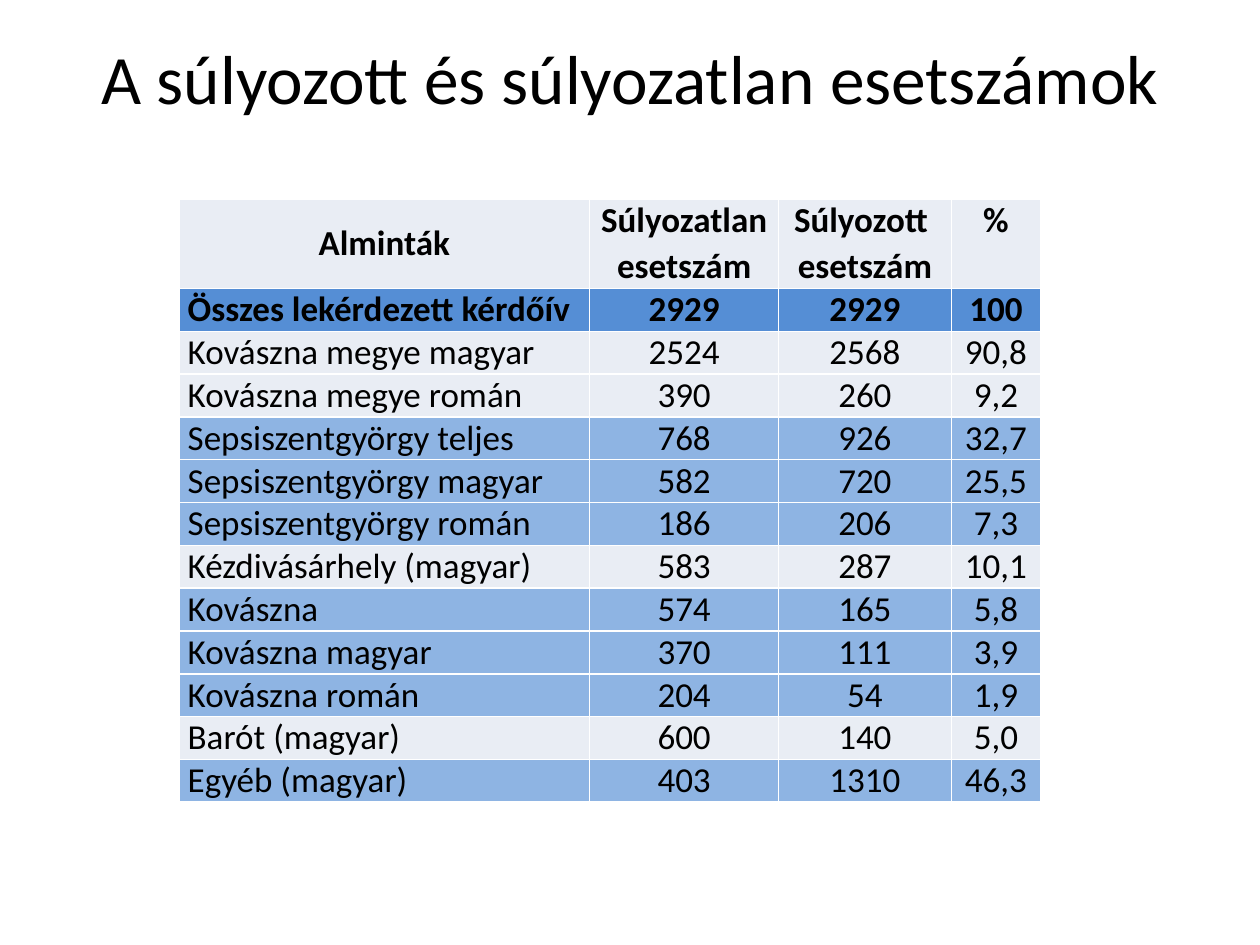
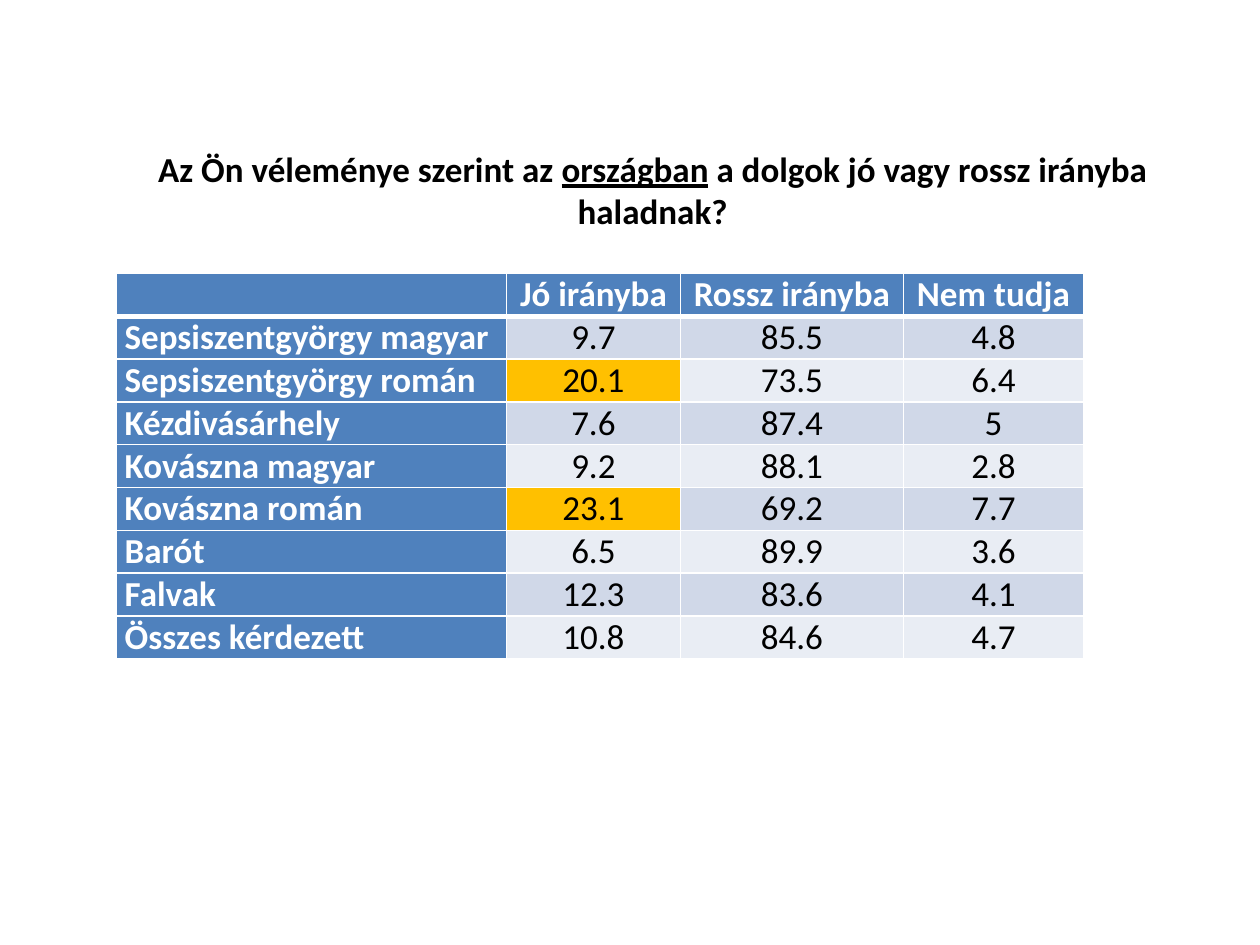
from lxml import etree
from pptx import Presentation
from pptx import util as u
from pptx.dml import color
from pptx.enum import text as t
from pptx.oxml import ns

FONT = "Calibri"
BLACK, WHITE = "000000", "FFFFFF"
PALE, LIGHT_BLUE, STRONG_BLUE = "E9EDF4", "8EB4E3", "558ED5"
HEADER_BLUE, BAND, HIGHLIGHT = "4F81BD", "D0D8E8", "FFC000"
LEFT, CENTER = t.PP_ALIGN.LEFT, t.PP_ALIGN.CENTER
TOP, MIDDLE, BOTTOM = t.MSO_ANCHOR.TOP, t.MSO_ANCHOR.MIDDLE, t.MSO_ANCHOR.BOTTOM
ROW_HEIGHT = 0.34

SAMPLE_HEADER = ["Alminták", "Súlyozatlan \nesetszám", "Súlyozott \nesetszám", "%"]
SAMPLE_ROWS = [
    (STRONG_BLUE, "Összes lekérdezett kérdőív", "2929", "2929", "100"),
    (PALE, "Kovászna megye magyar", "2524", "2568", "90,8"),
    (PALE, "Kovászna megye román", "390", "260", "9,2"),
    (LIGHT_BLUE, "Sepsiszentgyörgy teljes", "768", "926", "32,7"),
    (LIGHT_BLUE, "Sepsiszentgyörgy magyar", "582", "720", "25,5"),
    (LIGHT_BLUE, "Sepsiszentgyörgy román", "186", "206", "7,3"),
    (PALE, "Kézdivásárhely (magyar)", "583", "287", "10,1"),
    (LIGHT_BLUE, "Kovászna", "574", "165", "5,8"),
    (LIGHT_BLUE, "Kovászna magyar", "370", "111", "3,9"),
    (LIGHT_BLUE, "Kovászna román", "204", "54", "1,9"),
    (PALE, "Barót (magyar)", "600", "140", "5,0"),
    (LIGHT_BLUE, "Egyéb (magyar)", "403", "1310", "46,3"),
]
OPINION_ROWS = [
    ("", "Jó irányba", "Rossz irányba", "Nem tudja"),
    ("Sepsiszentgyörgy magyar", "9.7", "85.5", "4.8"),
    ("Sepsiszentgyörgy román", "20.1", "73.5", "6.4"),
    ("Kézdivásárhely", "7.6", "87.4", "5"),
    ("Kovászna magyar", "9.2", "88.1", "2.8"),
    ("Kovászna román", "23.1", "69.2", "7.7"),
    ("Barót", "6.5", "89.9", "3.6"),
    ("Falvak", "12.3", "83.6", "4.1"),
    ("Összes kérdezett", "10.8", "84.6", "4.7"),
]
HIGHLIGHTED_VALUES = {"20.1", "23.1"}


def rgb(value):
    return color.RGBColor.from_string(value)


def write_text(frame, text, size=20, fill=BLACK, bold=False, align=CENTER,
               spacing=0, underlined=None):
    """Write one paragraph per line; underline the given word."""
    for index, line in enumerate(text.split("\n")):
        paragraph = frame.paragraphs[0] if index == 0 else frame.add_paragraph()
        paragraph.alignment = align
        paragraph.space_before = paragraph.space_after = u.Pt(spacing)
        before, word, after = line.partition(underlined) if underlined else (line, "", "")
        for part in filter(None, (before, word, after)):
            run = paragraph.add_run()
            run.text = part
            font = run.font
            font.name, font.size, font.bold = FONT, u.Pt(size), bold
            font.color.rgb = rgb(fill)
            font.underline = True if part == underlined else None


def add_title(slide, box, text, **text_format):
    shape = slide.shapes.add_textbox(*map(u.Inches, box))
    frame = shape.text_frame
    frame.word_wrap = True
    frame.vertical_anchor = MIDDLE
    write_text(frame, text, **text_format)


def set_borders(cell, bottom=1):
    properties = cell._tc.get_or_add_tcPr()
    for side, width in (("L", 1), ("R", 1), ("T", 1), ("B", bottom)):
        line = etree.SubElement(properties, ns.qn("a:ln" + side), w=str(u.Pt(width)))
        solid = etree.SubElement(line, ns.qn("a:solidFill"))
        etree.SubElement(solid, ns.qn("a:srgbClr"), val=WHITE)


def add_table(slide, left, top, widths, heights):
    frame = slide.shapes.add_table(len(heights), len(widths), u.Inches(left), u.Inches(top),
                                   u.Inches(sum(widths)), u.Inches(sum(heights)))
    table = frame.table
    for column, width in zip(table.columns, widths):
        column.width = u.Inches(width)
    for row, height in zip(table.rows, heights):
        row.height = u.Inches(height)
    return table


def fill_cell(cell, text, background, anchor, bottom=1, **text_format):
    set_borders(cell, bottom)
    cell.fill.solid()
    cell.fill.fore_color.rgb = rgb(background)
    cell.margin_left = cell.margin_right = u.Inches(0.07)
    cell.margin_top = cell.margin_bottom = 0
    cell.vertical_anchor = anchor
    write_text(cell.text_frame, text, **text_format)


def add_sample_table(slide, left, top):
    rows = [(PALE, *SAMPLE_HEADER)] + SAMPLE_ROWS
    heights = [0.71] + [ROW_HEIGHT] * len(SAMPLE_ROWS)
    table = add_table(slide, left, top, [3.26, 1.5, 1.37, 0.71], heights)
    table.first_row = False
    for row, (background, *texts) in enumerate(rows):
        for column, text in enumerate(texts):
            fill_cell(table.cell(row, column), text, background,
                      TOP if column % 2 else MIDDLE, bold=row < 2,
                      align=LEFT if row and column == 0 else CENTER,
                      spacing=1 if row < 2 or column < 2 else 0)


def add_opinion_table(slide, left, top):
    table = add_table(slide, left, top, [3.1, 1.38, 1.77, 1.43],
                      [ROW_HEIGHT] * len(OPINION_ROWS))
    for row, texts in enumerate(OPINION_ROWS):
        for column, text in enumerate(texts):
            is_heading = row == 0 or column == 0
            if is_heading:
                background = HEADER_BLUE
            elif text in HIGHLIGHTED_VALUES:
                background = HIGHLIGHT
            else:
                background = BAND if row % 2 else PALE
            fill_cell(table.cell(row, column), text, background, BOTTOM,
                      bottom=1 if row else 3, bold=is_heading,
                      fill=WHITE if is_heading else BLACK,
                      align=CENTER if column else LEFT)


def main():
    presentation = Presentation()
    presentation.slide_width, presentation.slide_height = u.Inches(10), u.Inches(7.5)
    blank = presentation.slide_layouts[6]

    # Sample sizes
    slide = presentation.slides.add_slide(blank)
    add_title(slide, (0.5, 0.3, 9, 0.62), "A súlyozott és súlyozatlan esetszámok", size=39.6)
    add_sample_table(slide, 1.42, 1.58)

    # Opinion on the country's direction
    slide = presentation.slides.add_slide(blank)
    add_opinion_table(slide, 0.92, 2.17)
    add_title(slide, (0.72, 1.12, 8.92, 0.77),
              "Az Ön véleménye szerint az országban a dolgok jó vagy rossz irányba haladnak?",
              bold=True, underlined="országban")

    presentation.save("out.pptx")


if __name__ == "__main__":
    main()
